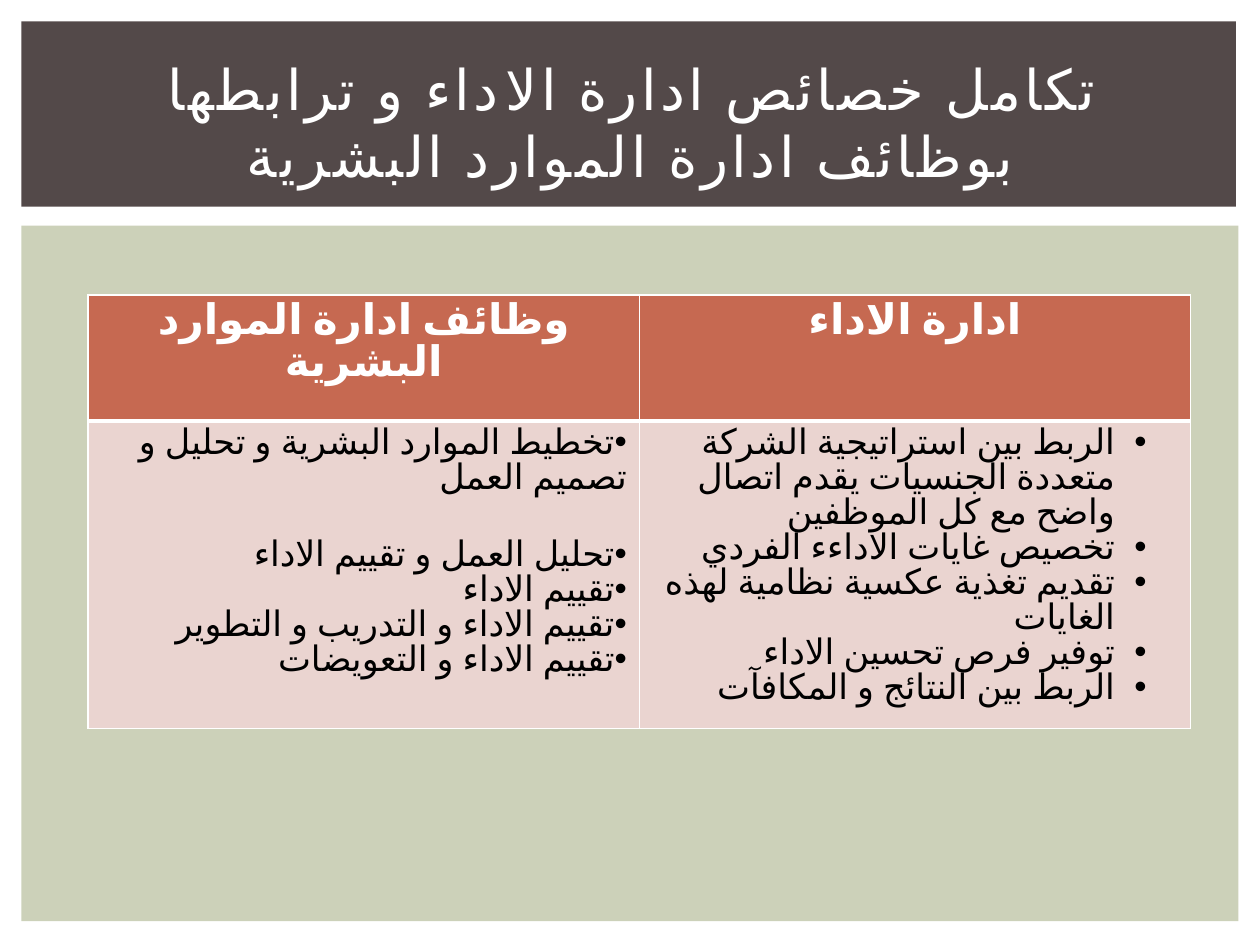
from lxml import etree
from pptx import Presentation
from pptx.dml.color import RGBColor
from pptx.enum.shapes import MSO_SHAPE
from pptx.enum.text import MSO_ANCHOR, PP_ALIGN
from pptx.oxml.ns import qn
from pptx.util import Inches, Pt

RECT = MSO_SHAPE.RECTANGLE
MIDDLE = MSO_ANCHOR.MIDDLE
CENTER, RIGHT = PP_ALIGN.CENTER, PP_ALIGN.RIGHT

FONT = "Lato"
COLORS = {
    "white": "FFFFFF",
    "black": "000000",
    "sage": "CCD1B9",
    "brown": "534949",
    "rust": "C66951",
    "blush": "EAD4D0",
}

TITLE = "تكامل خصائص ادارة الاداء و ترابطها بوظائف ادارة الموارد البشرية"
HEADS = ["وظائف ادارة الموارد البشرية", "ادارة الاداء"]
TASKS = [
    "تخطيط الموارد البشرية و تحليل و تصميم العمل",
    "تحليل العمل و تقييم الاداء",
    "تقييم الاداء",
    "تقييم الاداء و التدريب و التطوير",
    "تقييم الاداء و التعويضات",
]
GOALS = [
    "الربط بين استراتيجية الشركة متعددة الجنسيات يقدم اتصال واضح مع كل الموظفين",
    "تخصيص غايات الاداءء الفردي",
    "تقديم تغذية عكسية نظامية لهذه الغايات",
    "توفير فرص تحسين الاداء",
    "الربط بين النتائج و المكافآت",
]


def color(name):
    return RGBColor.from_string(COLORS[name])


def add_panel(slide, box, fill):
    panel = slide.shapes.add_shape(RECT, *map(Inches, box))
    panel.shadow.inherit = False
    panel.fill.solid()
    panel.fill.fore_color.rgb = color(fill)
    panel.line.fill.background()


def add_bullet(para, margin, hang):
    """Make a right-to-left bullet, with its indents in inches."""
    props = para._p.get_or_add_pPr()
    props.set("rtl", "1")
    props.set("marL", str(Inches(margin)))
    props.set("indent", str(Inches(-hang)))
    etree.SubElement(props, qn("a:buFont"), typeface="Arial")
    etree.SubElement(props, qn("a:buChar"), char="•")


def write(para, text, size, ink, align=CENTER, bold=False, track=0, pitch=None):
    """Fill a paragraph; track and pitch are in points."""
    run = para.add_run()
    run.text = text
    para.alignment = align
    if pitch:
        para.line_spacing = Pt(pitch)
    font = run.font
    font.name, font.size, font.bold = FONT, Pt(size), bold
    font.color.rgb = color(ink)
    props = run._r.get_or_add_rPr()
    props.set("lang", "ar-SA")
    etree.SubElement(props, qn("a:cs"), typeface=FONT)
    if track:
        props.set("spc", str(track * 100))


def add_title(slide):
    box = slide.shapes.add_textbox(*map(Inches, (0.42, 0.39, 9.17, 1.15)))
    frame = box.text_frame
    frame.word_wrap = True
    frame.vertical_anchor = MIDDLE
    write(frame.paragraphs[0], TITLE, 32, "white", track=2)


def style_cell(cell, fill, top, base):
    """Set the white borders, then the fill."""
    props = cell._tc.get_or_add_tcPr()
    for side, width in zip("LRTB", (1, 1, top, base)):
        line = etree.SubElement(props, qn(f"a:ln{side}"), w=str(Pt(width)))
        paint = etree.SubElement(line, qn("a:solidFill"))
        etree.SubElement(paint, qn("a:srgbClr"), val=COLORS["white"])
    cell.fill.solid()
    cell.fill.fore_color.rgb = color(fill)


def fill_list(cell, items, margin=0, hang=0, gap=0):
    """Write bullets, with a gap in points after the first."""
    frame = cell.text_frame
    for i, item in enumerate(items):
        para = frame.paragraphs[0] if i == 0 else frame.add_paragraph()
        add_bullet(para, margin, hang)
        write(para, item, 20, "black", align=RIGHT, pitch=20)
        if i == 1 and gap:
            para.space_before = Pt(gap)


def add_grid(slide):
    frame = slide.shapes.add_table(2, 2, *map(Inches, (0.7, 2.34, 8.75, 3.44)))
    table = frame.table
    for row, height in zip(table.rows, (1, 2.44)):
        row.height = Inches(height)
    for col, head in enumerate(HEADS):
        top, body = table.cell(0, col), table.cell(1, col)
        style_cell(top, "rust", 1, 3)
        style_cell(body, "blush", 3, 1)
        write(top.text_frame.paragraphs[0], head, 24, "white", bold=True, pitch=24)
    fill_list(table.cell(1, 0), TASKS, gap=24)
    fill_list(table.cell(1, 1), GOALS, margin=0.5, hang=0.25)


def main():
    deck = Presentation()
    deck.slide_width, deck.slide_height = Inches(10), Inches(7.5)
    slide = deck.slides.add_slide(deck.slide_layouts[6])
    add_panel(slide, (0.17, 1.79, 9.66, 5.52), "sage")
    add_panel(slide, (0.17, 0.17, 9.64, 1.47), "brown")
    add_title(slide)
    add_grid(slide)
    deck.save("out.pptx")


if __name__ == "__main__":
    main()
